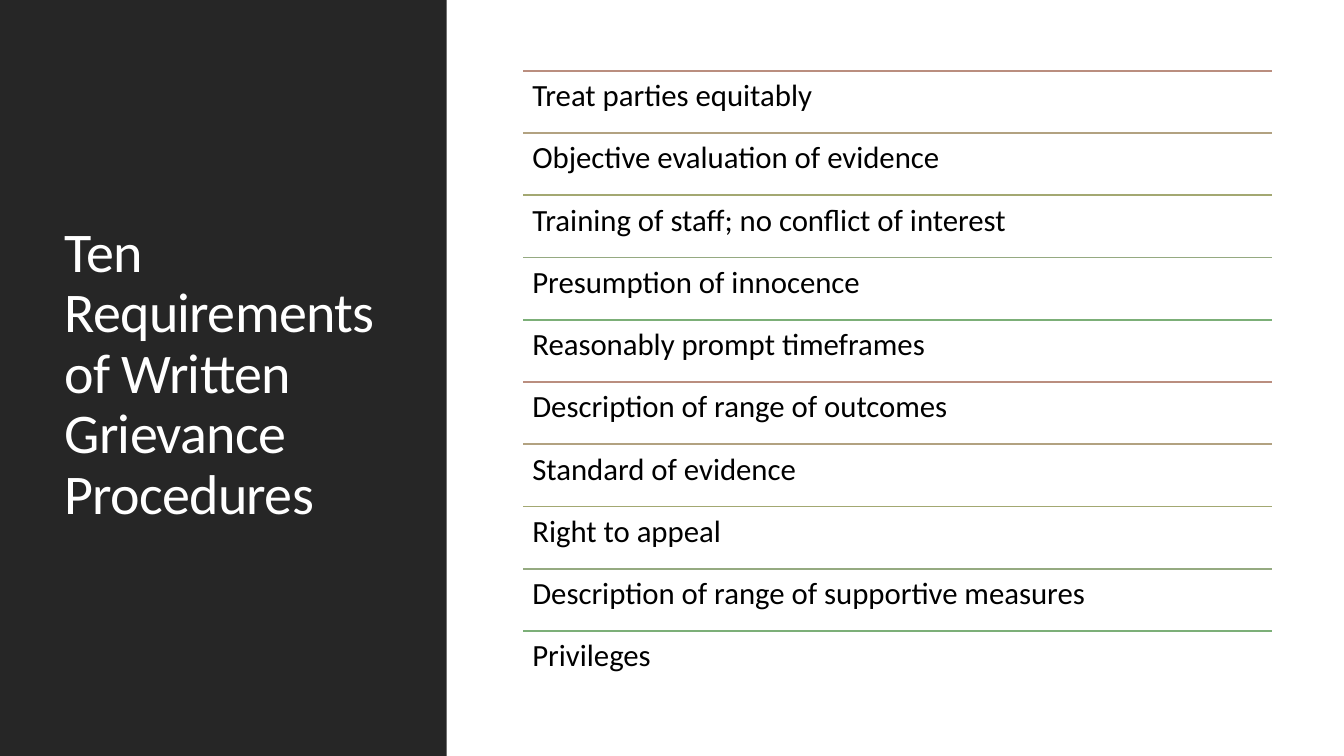
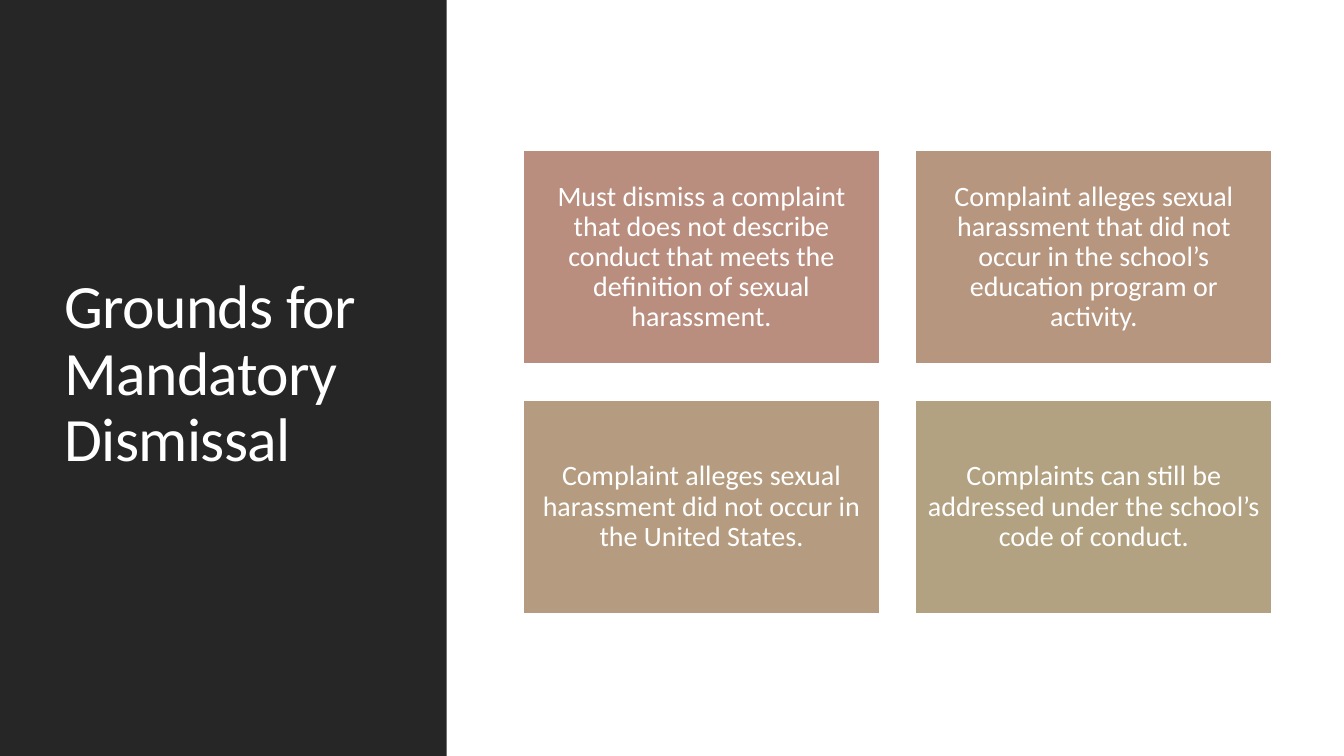
from dataclasses import dataclass

from pptx import Presentation
from pptx.dml.color import RGBColor
from pptx.enum import shapes as es, text as et
from pptx.oxml import ns, parse_xml
from pptx.util import Pt


@dataclass(frozen=True)
class Theme:
    font: str = "Calibri"
    dark: str = "262626"
    white: str = "FFFFFF"
    black: str = "000000"
    rules: tuple = ("BA8E7F", "B2A281", "A3A872", "95AA81", "7CAF78")
    cards: tuple = ("BA8E7F", "B79680", "B59C80", "B2A281")
    item: int = 22
    card: int = 20
    line: float = 1.25


THEME = Theme()
WIDE, HIGH = 960, 540
PANEL = 319
LEFT, SPAN = 373.7, 535

ITEMS = (
    "Treat parties equitably",
    "Objective evaluation of evidence",
    "Training of staff; no conflict of interest",
    "Presumption of innocence",
    "Reasonably prompt timeframes",
    "Description of range of outcomes",
    "Standard of evidence",
    "Right to appeal",
    "Description of range of supportive measures",
    "Privileges",
)
GROUNDS = (
    "Must dismiss a complaint that does not describe conduct that meets "
    "the definition of sexual harassment.",
    "Complaint alleges sexual harassment that did not occur in the "
    "school’s education program or activity.",
    "Complaint alleges sexual harassment did not occur in the United States.",
    "Complaints can still be addressed under the school’s code of conduct.",
)


def rgb(tone):
    return RGBColor.from_string(tone)


def write(shape, words, size, tone, inset, anchor, align=et.PP_ALIGN.LEFT):
    frame = shape.text_frame
    frame.text = words
    frame.word_wrap = True
    frame.auto_size = et.MSO_AUTO_SIZE.NONE
    frame.vertical_anchor = anchor
    frame.margin_left = frame.margin_right = Pt(inset)
    frame.margin_top = frame.margin_bottom = Pt(inset)
    para = frame.paragraphs[0]
    para.alignment = align
    para.line_spacing = 0.9
    para.font.name = THEME.font
    para.font.size = Pt(size)
    para.font.color.rgb = rgb(tone)


def block(slide, box, tone, edge=None):
    shape = slide.shapes.add_shape(es.MSO_SHAPE.RECTANGLE, *map(Pt, box))
    shape.shadow.inherit = False
    shape.fill.solid()
    shape.fill.fore_color.rgb = rgb(tone)
    if edge:
        shape.line.color.rgb = rgb(edge)
        shape.line.width = Pt(THEME.line)
    else:
        shape.line.fill.background()
    return shape


def rule(slide, top, tone):
    line = slide.shapes.add_connector(
        es.MSO_CONNECTOR.STRAIGHT, Pt(LEFT), Pt(top), Pt(LEFT + SPAN), Pt(top))
    line.line.color.rgb = rgb(tone)
    line.line.width = Pt(THEME.line)
    props = line.element.find(ns.qn("p:spPr"))
    props.append(parse_xml(f"<a:effectLst {ns.nsdecls('a')}/>"))


def page(deck, words, size, width):
    slide = deck.slides.add_slide(deck.slide_layouts.get_by_name("Title Only"))
    title = slide.shapes.title
    panel = block(slide, (0, 0, PANEL, HIGH), THEME.dark)
    title.element.addprevious(panel.element)
    title.left, title.top = Pt(39), Pt(41)
    title.width, title.height = Pt(width), Pt(454)
    write(title, words, size, THEME.white, 7.2, et.MSO_ANCHOR.MIDDLE)
    for props in title.element.iter(ns.qn("a:defRPr")):
        props.set("spc", "-50")
    return slide


def ruled(slide, items, top=50.5, step=44.48):
    for i, words in enumerate(items):
        y = top + i * step
        rule(slide, y, THEME.rules[i % len(THEME.rules)])
        box = slide.shapes.add_textbox(Pt(LEFT), Pt(y), Pt(SPAN), Pt(step))
        write(box, words, THEME.item, THEME.black, 6.6, et.MSO_ANCHOR.TOP)


def cards(slide, items, top=107.5, high=152.8, gap=25.5):
    wide = (SPAN - gap) / 2
    for i, (words, tone) in enumerate(zip(items, THEME.cards)):
        row, col = divmod(i, 2)
        box = (LEFT + col * (wide + gap), top + row * (high + gap), wide, high)
        card = block(slide, box, tone, THEME.white)
        write(card, words, THEME.card, THEME.white, 6,
              et.MSO_ANCHOR.MIDDLE, et.PP_ALIGN.CENTER)


def main():
    deck = Presentation()
    deck.slide_width, deck.slide_height = Pt(WIDE), Pt(HIGH)
    ruled(page(deck, "Ten Requirements of Written Grievance Procedures", 40, 260.6),
          ITEMS)
    cards(page(deck, "Grounds for Mandatory Dismissal", 44, 242.6), GROUNDS)
    deck.save("out.pptx")


if __name__ == "__main__":
    main()
